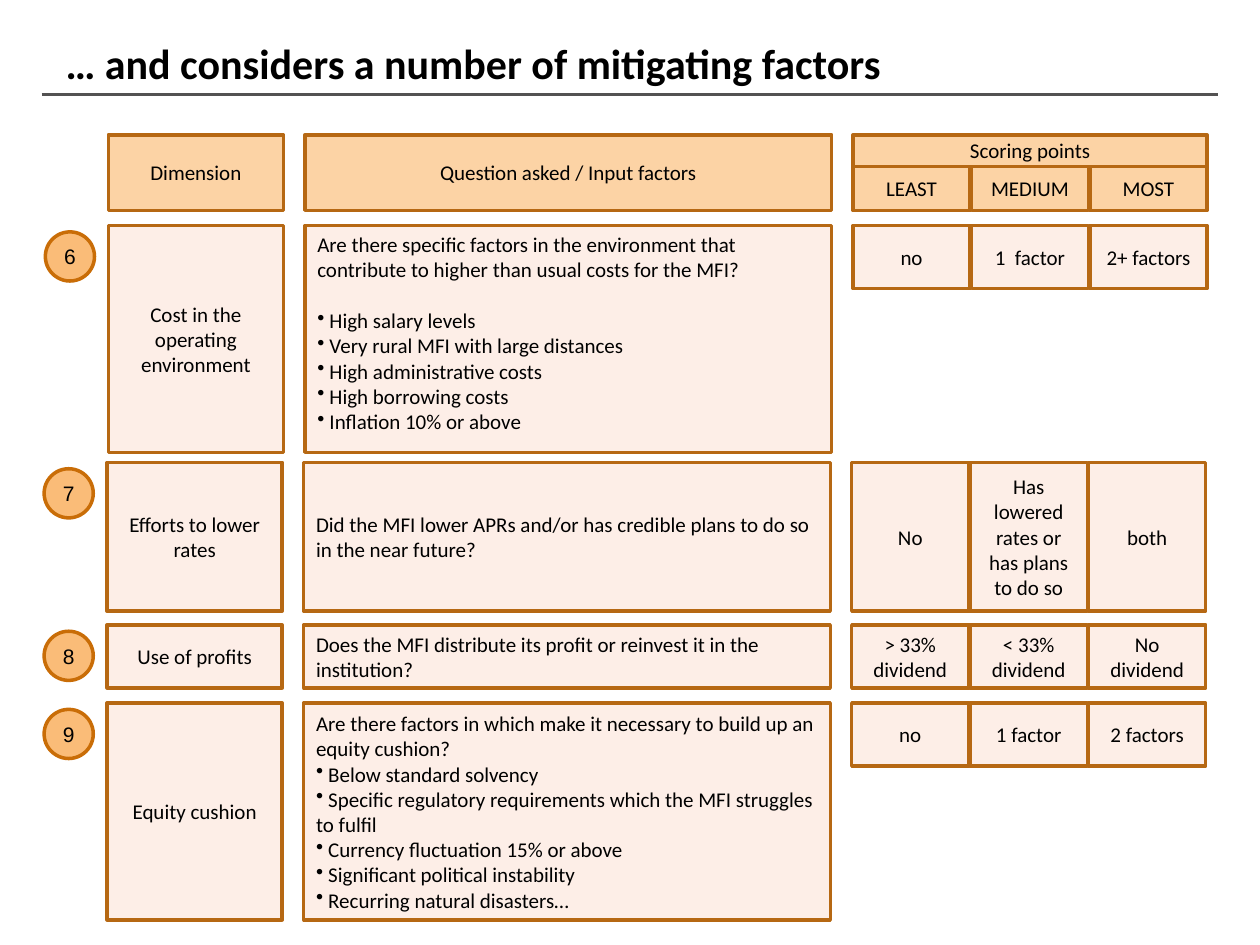
"""Build the slide of mitigating factors and their scoring points."""
from dataclasses import dataclass, field

import lxml.etree
import pptx
import pptx.dml.color
import pptx.enum.shapes
import pptx.enum.text
import pptx.oxml.ns
import pptx.util

Inches = pptx.util.Inches
Pt = pptx.util.Pt
Color = pptx.dml.color.RGBColor.from_string
Kind = pptx.enum.shapes.MSO_SHAPE
Align = pptx.enum.text.PP_ALIGN
Anchor = pptx.enum.text.MSO_ANCHOR
qn = pptx.oxml.ns.qn


@dataclass(frozen=True)
class Theme:
    ink: str = "000000"
    rule: str = "535252"
    edge: str = "B66813"
    head: str = "FCD3A5"
    cell: str = "FDEEE7"
    disc: str = "FABC78"
    ring: str = "C96D07"
    font: str = "Calibri"
    digit: str = "Arial"
    title: float = 24
    body: float = 12
    line: float = 2


@dataclass(frozen=True)
class Box:
    left: float
    top: float
    width: float
    height: float


@dataclass(frozen=True)
class Row:
    number: str
    left: float
    top: float
    height: float
    topic: str
    question: str
    scores: tuple[str, ...]
    points: tuple[str, ...] = ()
    score_height: float = 0.5
    gap: float = 0
    anchor: Anchor = field(default=Anchor.MIDDLE)


THEME = Theme()
TOPIC_WIDTH, ASK_WIDTH, SCORE_WIDTH = 1.39, 4.18, 0.93
ASK_SHIFT, SCORE_SHIFT, SCORE_STEP = 1.56, 5.91, 0.94
HEAD_LEFT, HEAD_TOP = 0.86, 1.07

ROWS = (
    Row("6", 0.86, 1.79, 1.8, "Cost in the operating environment",
        "Are there specific factors in the environment that contribute to "
        "higher than usual costs for the MFI?",
        ("no", "1  factor", "2+ factors"),
        ("High salary levels", "Very rural MFI with large distances",
         "High administrative costs", "High borrowing costs",
         "Inflation 10% or above"),
        gap=14.6, anchor=Anchor.TOP),
    Row("7", 0.85, 3.67, 1.18, "Efforts to lower rates",
        "Did the MFI lower APRs and/or has credible plans to do so in the "
        "near future?",
        ("No", "Has lowered rates or has plans to do so", "both"),
        score_height=1.18),
    Row("8", 0.85, 4.96, 0.5, "Use of profits",
        "Does the MFI distribute its profit or reinvest it in the institution?",
        ("> 33% dividend", "< 33% dividend", "No dividend")),
    Row("9", 0.85, 5.58, 1.72, "Equity cushion",
        "Are there factors in which make it necessary to build up an equity "
        "cushion?",
        ("no", "1 factor", "2 factors"),
        ("Below standard solvency",
         "Specific regulatory requirements which the MFI struggles to fulfil",
         "Currency fluctuation 15% or above",
         "Significant political instability", "Recurring natural disasters…")),
)


def place(shape, box: Box) -> None:
    """Move a shape to its box."""
    shape.left, shape.top = Inches(box.left), Inches(box.top)
    shape.width, shape.height = Inches(box.width), Inches(box.height)


def style(para, align: Align, size: float = THEME.body,
          face: str = THEME.font, bold: bool = False) -> None:
    """Set the alignment and font of a paragraph."""
    para.alignment = align
    para.font.name = face
    para.font.size = Pt(size)
    para.font.bold = bold
    para.font.color.rgb = Color(THEME.ink)


def draw_box(slide, box: Box, text: str, fill: str, edge: str = THEME.edge,
             kind: Kind = Kind.RECTANGLE, align: Align = Align.CENTER,
             face: str = THEME.font):
    """Draw one outlined shape with its text and return it."""
    shape = slide.shapes.add_shape(
        kind, Inches(box.left), Inches(box.top),
        Inches(box.width), Inches(box.height))
    shape.shadow.inherit = False
    shape.fill.solid()
    shape.fill.fore_color.rgb = Color(fill)
    shape.line.color.rgb = Color(edge)
    shape.line.width = Pt(THEME.line)
    frame = shape.text_frame
    frame.word_wrap = kind == Kind.RECTANGLE
    frame.vertical_anchor = Anchor.MIDDLE
    frame.text = text
    style(frame.paragraphs[0], align, face=face)
    return shape


def add_point(frame, text: str, gap: float) -> None:
    """Add one bulleted paragraph."""
    para = frame.add_paragraph()
    para.text = f" {text}"
    props = para._p.get_or_add_pPr()
    lxml.etree.SubElement(props, qn("a:buChar")).set("char", "•")
    para.space_before = Pt(gap)
    style(para, Align.LEFT)


def draw_scores(slide, left: float, top: float, height: float,
                scores: tuple[str, ...], fill: str) -> None:
    """Draw the scoring cells side by side."""
    for i, score in enumerate(scores):
        box = Box(left + SCORE_SHIFT + i * SCORE_STEP, top, SCORE_WIDTH, height)
        draw_box(slide, box, score, fill)


def draw_row(slide, row: Row) -> None:
    """Draw a numbered row with its topic, question and scores."""
    draw_scores(slide, row.left, row.top, row.score_height, row.scores,
                THEME.cell)
    draw_box(slide, Box(row.left - 0.5, row.top + 0.05, 0.39, 0.39), row.number,
             THEME.disc, THEME.ring, Kind.OVAL, face=THEME.digit)
    draw_box(slide, Box(row.left, row.top, TOPIC_WIDTH, row.height), row.topic,
             THEME.cell)
    ask = draw_box(
        slide, Box(row.left + ASK_SHIFT, row.top, ASK_WIDTH, row.height),
        row.question, THEME.cell, align=Align.LEFT)
    ask.text_frame.vertical_anchor = row.anchor
    for i, point in enumerate(row.points):
        add_point(ask.text_frame, point, 0 if i else row.gap)


def draw_head(slide) -> None:
    """Draw the column headings."""
    draw_box(slide, Box(HEAD_LEFT, HEAD_TOP, TOPIC_WIDTH, 0.6), "Dimension",
             THEME.head)
    draw_box(slide, Box(HEAD_LEFT + ASK_SHIFT, HEAD_TOP, ASK_WIDTH, 0.6),
             "Question asked / Input factors", THEME.head)
    draw_scores(slide, HEAD_LEFT, HEAD_TOP + 0.25, 0.35,
                ("LEAST", "MEDIUM", "MOST"), THEME.head)
    draw_box(slide, Box(HEAD_LEFT + SCORE_SHIFT, HEAD_TOP, 2.81, 0.25),
             "Scoring points", THEME.head)


def draw_title(slide) -> None:
    """Fill the title and draw the rule below it."""
    title = slide.shapes.title
    place(title, Box(0.42, 0.25, 6.87, 0.5))
    frame = title.text_frame
    frame.text = "… and considers a number of mitigating factors"
    frame.auto_size = pptx.enum.text.MSO_AUTO_SIZE.NONE
    frame.word_wrap = False
    frame.vertical_anchor = Anchor.TOP
    style(frame.paragraphs[0], Align.LEFT, THEME.title, bold=True)
    rule = slide.shapes.add_connector(
        pptx.enum.shapes.MSO_CONNECTOR.STRAIGHT,
        Inches(0.33), Inches(0.75), Inches(9.67), Inches(0.75))
    rule.line.color.rgb = Color(THEME.rule)
    rule.line.width = Pt(2.25)
    lxml.etree.SubElement(rule._element.spPr, qn("a:effectLst"))


def main() -> None:
    """Build and save the slide."""
    deck = pptx.Presentation()
    deck.slide_width, deck.slide_height = Inches(10), Inches(7.5)
    slide = deck.slides.add_slide(deck.slide_layouts[5])
    draw_title(slide)
    for row in ROWS:
        draw_row(slide, row)
    draw_head(slide)
    deck.save("out.pptx")


if __name__ == "__main__":
    main()
